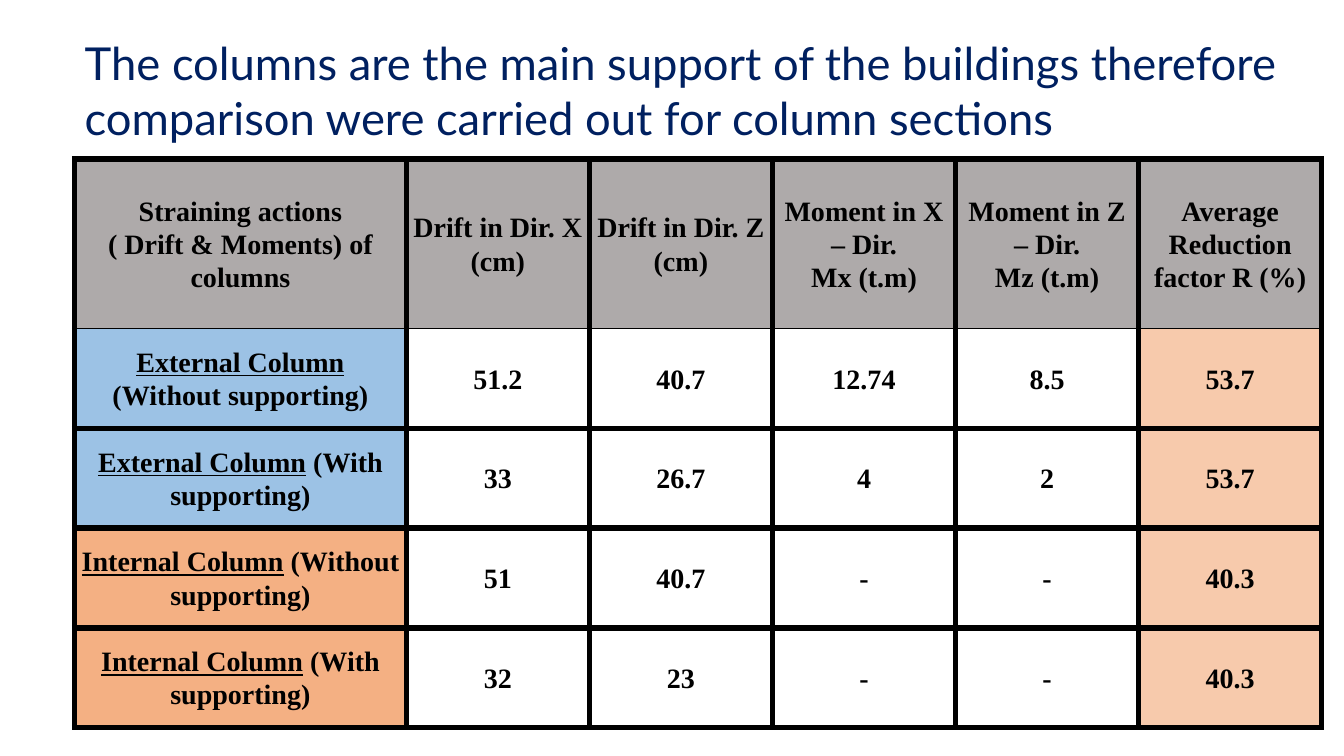
from lxml import etree
from pptx import Presentation
from pptx.dml.color import RGBColor
from pptx.enum import text
from pptx.oxml import ns
from pptx.util import Inches, Pt

HEADLINE = ("The columns are the main support of the buildings therefore "
            "comparison were carried out for column sections")
HEADINGS = [
    "Straining actions\n( Drift & Moments) of columns",
    "Drift in Dir. X (cm)",
    "Drift in Dir. Z (cm)",
    "Moment in X – Dir.\nMx (t.m)",
    "Moment in Z – Dir.\nMz (t.m)",
    "Average\nReduction factor R (%)",
]
COLUMN_CASES = [
    ("External Column", " (Without supporting)", ["51.2", "40.7", "12.74", "8.5", "53.7"]),
    ("External Column", " (With supporting)", ["33", "26.7", "4", "2", "53.7"]),
    ("Internal Column", " (Without supporting)", ["51", "40.7", "-", "-", "40.3"]),
    ("Internal Column", " (With supporting)", ["32", "23", "-", "-", "40.3"]),
]
CASE_FILLS = {"External Column": "9CC2E5", "Internal Column": "F4B083"}
HEADING_FILL, REDUCTION_FILL = "AEAAAA", "F7CAAC"
LEFT, TOP, WIDTH, HEIGHT = 0.74, 1.58, 12.37, 5.64
LABEL_WIDTH, HEADING_HEIGHT = 3.29, 1.68
THICK, THIN = 4.5, 1


def color(hex_string):
    return RGBColor.from_string(hex_string)


def style_run(run, font_name, size, hex_string):
    run.font.name = font_name
    run.font.size = Pt(size)
    run.font.color.rgb = color(hex_string)


def set_borders(cell, top, bottom):
    properties = cell._tc.get_or_add_tcPr()
    widths = {"a:lnL": THICK, "a:lnR": THICK, "a:lnT": top, "a:lnB": bottom}
    for position, (side, width) in enumerate(widths.items()):
        line = etree.Element(ns.qn(side), w=str(Pt(width)))
        solid = etree.SubElement(line, ns.qn("a:solidFill"))
        etree.SubElement(solid, ns.qn("a:srgbClr"), val="000000")
        properties.insert(position, line)


def format_cell(cell, fill, top, bottom):
    cell.vertical_anchor = text.MSO_ANCHOR.MIDDLE
    cell.margin_left = cell.margin_right = Inches(0.07)
    cell.margin_top = cell.margin_bottom = 0
    if fill:
        cell.fill.solid()
        cell.fill.fore_color.rgb = color(fill)
    else:
        cell.fill.background()
    set_borders(cell, top, bottom)
    for paragraph in cell.text_frame.paragraphs:
        paragraph.alignment = text.PP_ALIGN.CENTER
        paragraph.line_spacing = 1.07
        for run in paragraph.runs:
            style_run(run, "Times New Roman", 20, "000000")
            run.font.bold = True


deck = Presentation()
deck.slide_width, deck.slide_height = Inches(13.33), Inches(7.5)
slide = deck.slides.add_slide(deck.slide_layouts[5])

headline = slide.shapes.title
headline.left, headline.top = Inches(LEFT), Inches(0.3)
headline.width, headline.height = Inches(WIDTH), Inches(1.44)
headline.text_frame.text = HEADLINE
headline.text_frame.word_wrap = True
headline.text_frame.auto_size = text.MSO_AUTO_SIZE.NONE
headline.text_frame.vertical_anchor = text.MSO_ANCHOR.TOP
headline.text_frame.paragraphs[0].alignment = text.PP_ALIGN.LEFT
style_run(headline.text_frame.paragraphs[0].runs[0], "Lato", 32.4, "002060")

comparison = slide.shapes.add_table(
    len(COLUMN_CASES) + 1, len(HEADINGS),
    Inches(LEFT), Inches(TOP), Inches(WIDTH), Inches(HEIGHT)).table
comparison.first_row = comparison.horz_banding = False
value_width = (WIDTH - LABEL_WIDTH) / (len(HEADINGS) - 1)
case_height = (HEIGHT - HEADING_HEIGHT) / len(COLUMN_CASES)
for index, column in enumerate(comparison.columns):
    column.width = Inches(value_width if index else LABEL_WIDTH)
for index, row in enumerate(comparison.rows):
    row.height = Inches(case_height if index else HEADING_HEIGHT)

for index, heading in enumerate(HEADINGS):
    cell = comparison.cell(0, index)
    cell.text_frame.text = heading
    format_cell(cell, HEADING_FILL, THICK, THIN)

for row_index, (column_kind, support, values) in enumerate(COLUMN_CASES, 1):
    top = THIN if row_index == 1 else THICK
    label = comparison.cell(row_index, 0)
    label.text_frame.text = column_kind
    label.text_frame.paragraphs[0].runs[0].font.underline = True
    label.text_frame.paragraphs[0].add_run().text = support
    format_cell(label, CASE_FILLS[column_kind], top, THICK)
    for value_index, value in enumerate(values, 1):
        cell = comparison.cell(row_index, value_index)
        cell.text_frame.text = value
        fill = REDUCTION_FILL if value_index == len(values) else None
        format_cell(cell, fill, top, THICK)

deck.save("out.pptx")
